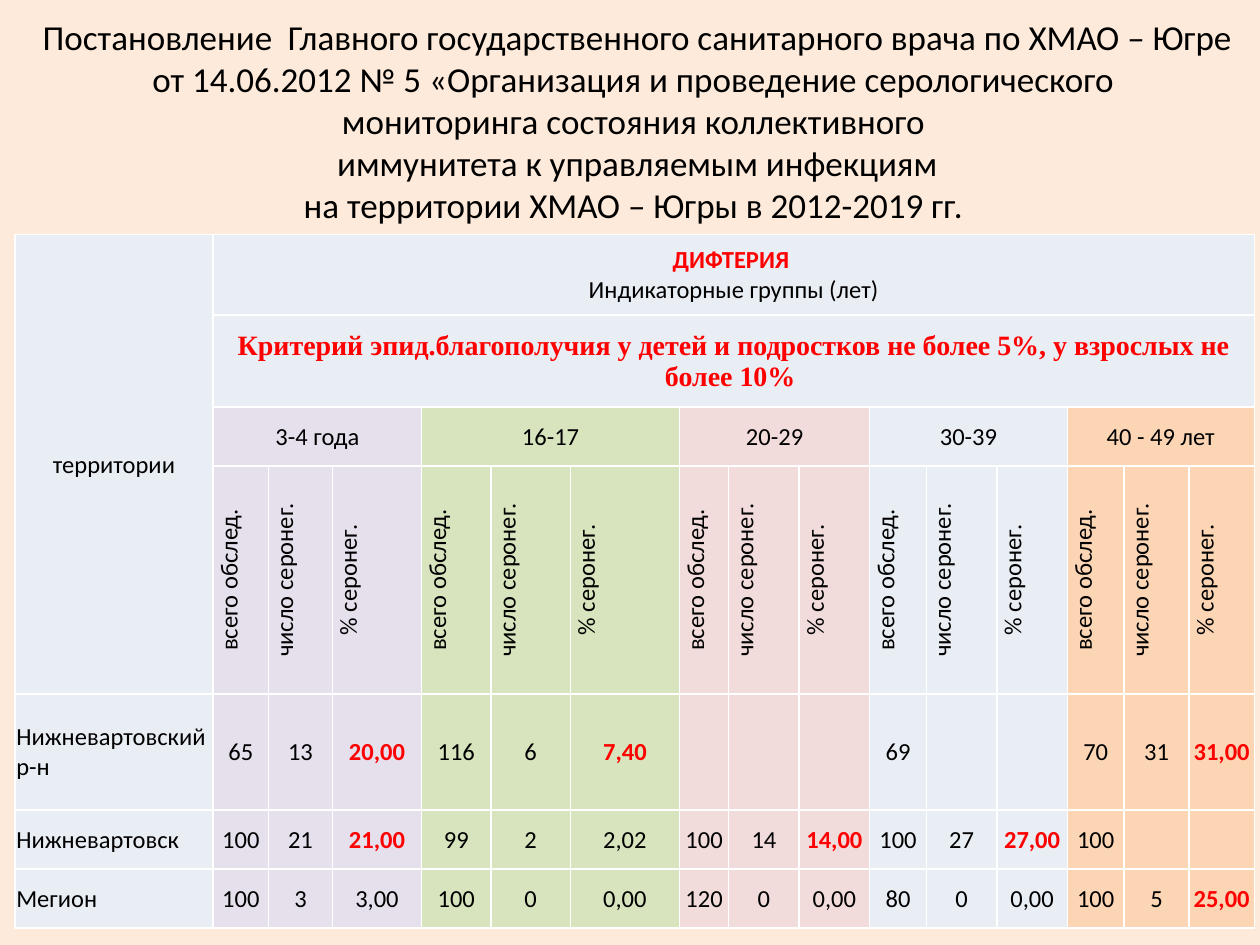
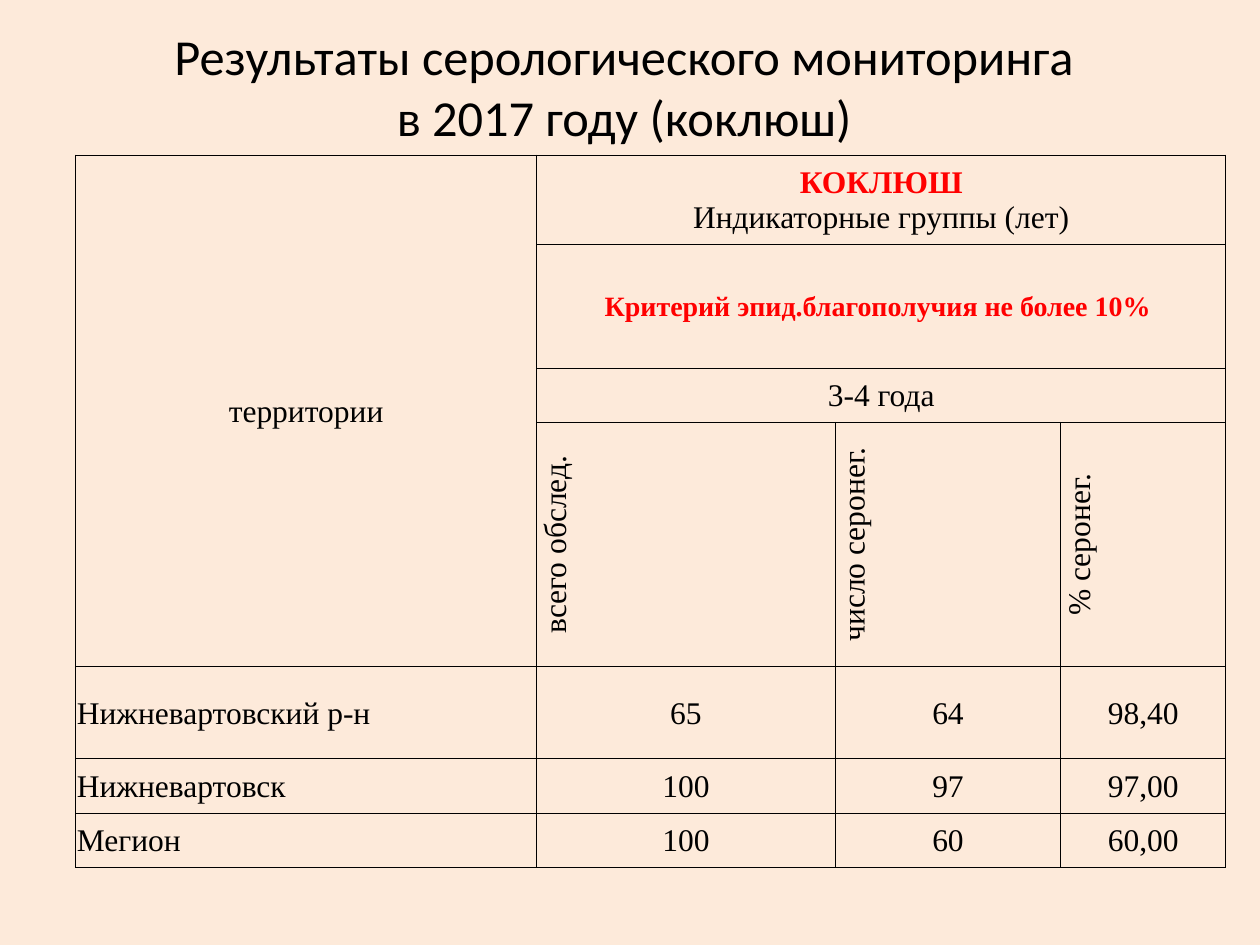
from dataclasses import dataclass
from typing import Optional

from lxml import etree
from pptx import Presentation
from pptx.dml.color import RGBColor
from pptx.enum import text as t
from pptx.oxml import ns
from pptx.util import Pt


@dataclass(frozen=True)
class Theme:
    background: str = "FDEADA"
    ink: str = "000000"
    alert: str = "FF0000"
    white: str = "FFFFFF"
    neutral: str = "E9EDF4"
    lilac: str = "E6E0EC"
    green: str = "D7E4BD"
    rose: str = "F2DCDB"
    orange: str = "FCD5B5"
    sans: str = "Calibri"
    serif: str = "Times New Roman"
    long_title_size: float = 20
    short_title_size: float = 28.8
    criterion_size: float = 16
    cell_inset: float = 0.72


THEME = Theme()
TERRITORIES = ["Нижневартовский р-н", "Нижневартовск", "Мегион"]
MEASURES = ["всего обслед.", "число серонег.", "% серонег."]
HEADER_ROWS = 4


@dataclass
class AgeGroup:
    """One age group; shares of seronegatives above limit are highlighted."""
    label: str
    results: list
    fill: Optional[str] = None
    limit: Optional[float] = None

    def exceeds(self, share):
        return bool(share) and self.limit is not None and float(share.replace(",", ".")) > self.limit


@dataclass
class TableLook:
    font: str
    size: float
    border: str
    border_width: float
    fill: Optional[str] = None


def write(paragraph, words, *, font, size, color=THEME.ink, bold=False, align=t.PP_ALIGN.CENTER):
    paragraph.alignment = align
    run = paragraph.add_run()
    run.text = words
    run.font.name = font
    run.font.size = Pt(size)
    run.font.bold = bold
    run.font.color.rgb = RGBColor.from_string(color)


def add_slide(deck):
    slide = deck.slides.add_slide(deck.slide_layouts[6])
    slide.background.fill.solid()
    slide.background.fill.fore_color.rgb = RGBColor.from_string(THEME.background)
    return slide


def add_title(slide, lines, size, left, top, width, height):
    frame = slide.shapes.add_textbox(Pt(left), Pt(top), Pt(width), Pt(height)).text_frame
    frame.word_wrap = True
    frame.vertical_anchor = t.MSO_ANCHOR.MIDDLE
    for index, line in enumerate(lines):
        paragraph = frame.add_paragraph() if index else frame.paragraphs[0]
        write(paragraph, line, font=THEME.sans, size=size)


def style_cell(cell, look, fill):
    cell.vertical_anchor = t.MSO_ANCHOR.MIDDLE
    cell.margin_left = cell.margin_right = cell.margin_top = Pt(THEME.cell_inset)
    cell.margin_bottom = 0
    properties = cell._tc.get_or_add_tcPr()
    for side in ("lnL", "lnR", "lnT", "lnB"):
        line = etree.SubElement(properties, ns.qn(f"a:{side}"), w=str(Pt(look.border_width)))
        solid = etree.SubElement(line, ns.qn("a:solidFill"))
        etree.SubElement(solid, ns.qn("a:srgbClr"), val=look.border)
    if fill:
        cell.fill.solid()
        cell.fill.fore_color.rgb = RGBColor.from_string(fill)
    else:
        cell.fill.background()


def add_monitoring_table(slide, disease, criterion, groups, look, left, top, widths, heights):
    """Table with a four-row header, then one row for each territory."""
    frame = slide.shapes.add_table(len(heights), len(widths), Pt(left), Pt(top),
                                   Pt(sum(widths)), Pt(sum(heights)))
    table = frame.table
    table.first_row = table.horz_banding = False
    for column, width in zip(table.columns, widths):
        column.width = Pt(width)
    for row, height in zip(table.rows, heights):
        row.height = Pt(height)

    step = len(MEASURES)
    fills = [look.fill] + [group.fill for group in groups for _ in MEASURES]
    for row in range(len(heights)):
        for column, fill in enumerate(fills):
            style_cell(table.cell(row, column), look, fill if row > 1 else look.fill)

    def put(row, column, words, **kwargs):
        settings = {"font": look.font, "size": look.size, **kwargs}
        write(table.cell(row, column).text_frame.paragraphs[0], words, **settings)

    last = len(widths) - 1
    table.cell(0, 0).merge(table.cell(HEADER_ROWS - 1, 0))
    for row in (0, 1):
        table.cell(row, 1).merge(table.cell(row, last))
    put(0, 0, "территории")
    put(0, 1, disease, color=THEME.alert, bold=True)
    write(table.cell(0, 1).text_frame.add_paragraph(), "Индикаторные группы (лет)",
          font=look.font, size=look.size)
    put(1, 1, criterion, font=THEME.serif, size=THEME.criterion_size,
        color=THEME.alert, bold=True)

    for row, territory in enumerate(TERRITORIES, HEADER_ROWS):
        put(row, 0, territory, align=t.PP_ALIGN.LEFT)

    for first, group in zip(range(1, last + 1, step), groups):
        table.cell(2, first).merge(table.cell(2, first + step - 1))
        put(2, first, group.label)
        for column, measure in enumerate(MEASURES, first):
            put(3, column, measure)
            table.cell(3, column)._tc.get_or_add_tcPr().set("vert", "vert270")
        for row, result in enumerate(group.results, HEADER_ROWS):
            for column, value in enumerate(result, first):
                alarming = column == first + step - 1 and group.exceeds(value)
                if value:
                    put(row, column, value, bold=alarming,
                        color=THEME.alert if alarming else THEME.ink)


def add_diphtheria(deck):
    slide = add_slide(deck)
    add_title(slide, [
        "Постановление  Главного государственного санитарного врача по ХМАО – Югре "
        "от 14.06.2012 № 5 «Организация и проведение серологического ",
        "мониторинга состояния коллективного ",
        "иммунитета к управляемым инфекциям",
        "на территории ХМАО – Югры в 2012-2019 гг. ",
    ], THEME.long_title_size, 8.6, 9.4, 711.4, 118.8)
    groups = [
        AgeGroup("3-4 года", [("65", "13", "20,00"), ("100", "21", "21,00"), ("100", "3", "3,00")],
                 THEME.lilac, 5),
        AgeGroup("16-17", [("116", "6", "7,40"), ("99", "2", "2,02"), ("100", "0", "0,00")],
                 THEME.green, 5),
        AgeGroup("20-29", [("", "", ""), ("100", "14", "14,00"), ("120", "0", "0,00")],
                 THEME.rose, 10),
        AgeGroup("30-39", [("69", "", ""), ("100", "27", "27,00"), ("80", "0", "0,00")],
                 THEME.neutral, 10),
        AgeGroup("40 - 49 лет", [("70", "31", "31,00"), ("100", "", ""), ("100", "5", "25,00")],
                 THEME.orange, 10),
    ]
    add_monitoring_table(
        slide, "ДИФТЕРИЯ ",
        "Критерий эпид.благополучия у детей и подростков не более 5%, у взрослых не более 10% ",
        groups, TableLook(THEME.sans, 14, THEME.white, 1, THEME.neutral), 8.6, 133.9,
        widths=[113.2, 31.7, 36.5, 51, 39.6, 45.4, 62.4, 28.1, 40.3, 40.3,
                32.4, 40.3, 40.3, 32.4, 37.2, 37.2],
        heights=[46, 52.6, 33.8, 130.3, 66.2, 33.8, 33.8])


def add_pertussis(deck):
    slide = add_slide(deck)
    add_title(slide, ["Результаты серологического мониторинга ", "в 2017 году (коклюш) "],
              THEME.short_title_size, 36, 15.1, 648, 67.7)
    groups = [AgeGroup("3-4 года", [("65", "64", "98,40"), ("100", "97", "97,00"),
                                    ("100", "60", "60,00")])]
    add_monitoring_table(
        slide, "КОКЛЮШ", "Критерий эпид.благополучия не более 10% ", groups,
        TableLook(THEME.serif, 18, THEME.ink, 0.5), 43.2, 88.6,
        widths=[263.5, 170.6, 128.9, 94.3],
        heights=[51.1, 70.6, 31, 139.7, 52.6, 31, 31])


def main():
    deck = Presentation()
    deck.slide_width, deck.slide_height = Pt(720), Pt(540)
    add_diphtheria(deck)
    add_pertussis(deck)
    deck.save("out.pptx")


if __name__ == "__main__":
    main()
